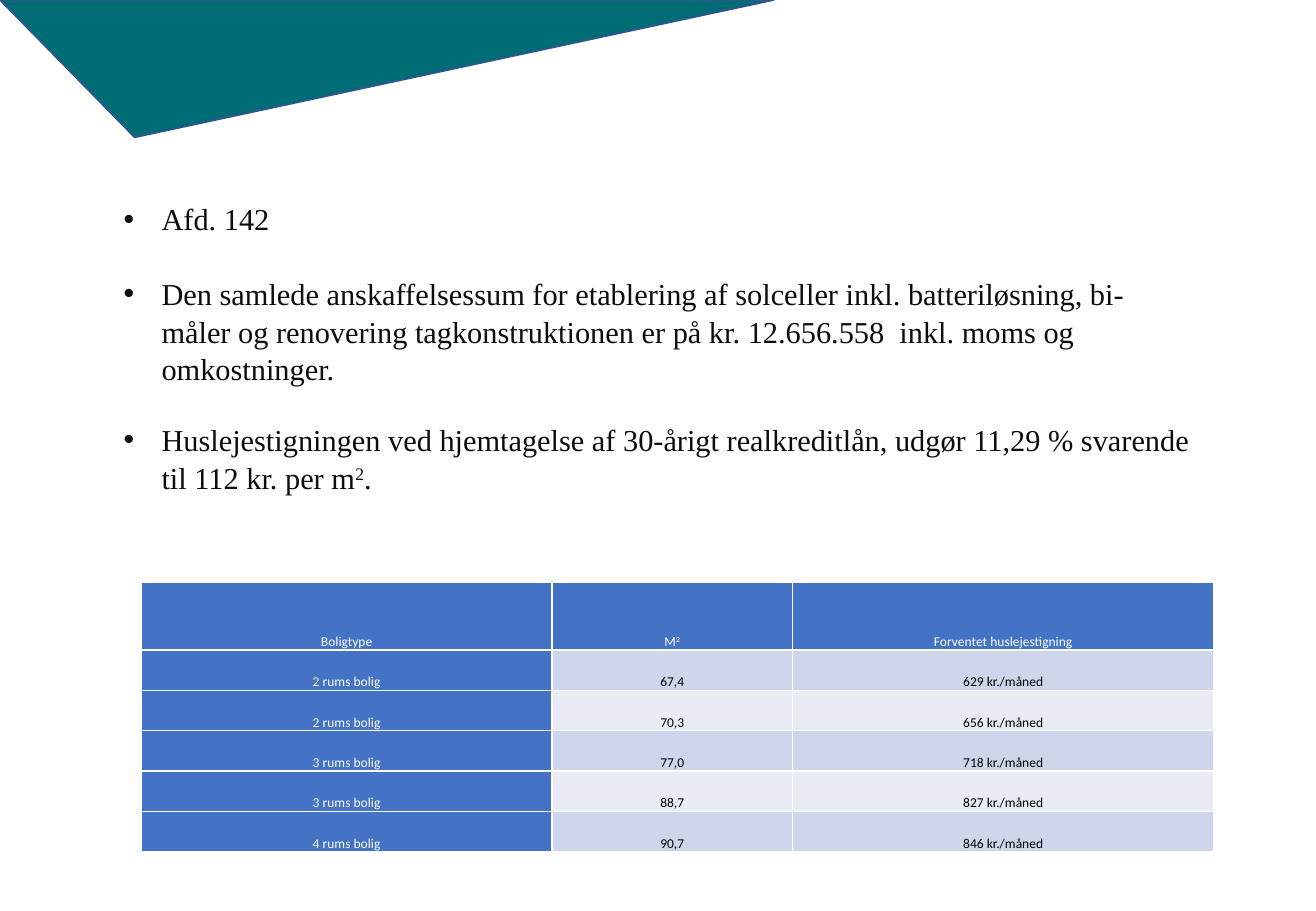
from lxml.etree import SubElement
from pptx import Presentation
from pptx.dml.color import RGBColor
from pptx.enum.shapes import MSO_SHAPE
from pptx.enum.text import MSO_ANCHOR, MSO_AUTO_SIZE, PP_ALIGN
from pptx.oxml.ns import qn
from pptx.util import Pt

COLORS = {
    "teal": "006D75",
    "outline": "325491",
    "ink": "0D0D0D",
    "black": "000000",
    "white": "FFFFFF",
    "header": "4472C4",
    "band_dark": "CFD5EA",
    "band_light": "E9EBF5",
}

POINTS = [
    (["Afd. 142"], 0),
    (["Den samlede anskaffelsessum for etablering af solceller inkl. batteriløsning, "
      "bi-måler og renovering tagkonstruktionen er på kr. 12.656.558  inkl. moms og "
      "omkostninger."], 21.6),
    (["Huslejestigningen ved hjemtagelse af 30-årigt realkreditlån, udgør 11,29 % "
      "svarende til 112 kr. per m", "2", "."], 19.4),
]

RENTS = [
    (["Boligtype"], ["M", "2"], ["Forventet huslejestigning"]),
    (["2 rums bolig"], ["67,4"], ["629 kr./måned"]),
    (["2 rums bolig"], ["70,3"], ["656 kr./måned"]),
    (["3 rums bolig"], ["77,0"], ["718 kr./måned"]),
    (["3 rums bolig"], ["88,7"], ["827 kr./måned"]),
    (["4 rums bolig"], ["90,7"], ["846 kr./måned"]),
]
COLUMN_WIDTHS = [243.4, 142.6, 249.8]
ROW_HEIGHTS = [40.3] + [23.9] * 5


def color(name):
    return RGBColor.from_string(COLORS[name])


def write(paragraph, parts, font_name, size, ink):
    for index, part in enumerate(parts):
        run = paragraph.add_run()
        run.text = part
        if index == 1:
            run._r.get_or_add_rPr().set("baseline", "30000")
    paragraph.font.name = font_name
    paragraph.font.size = Pt(size)
    paragraph.font.color.rgb = color(ink)


def add_banner(slide):
    banner = slide.shapes.add_shape(
        MSO_SHAPE.ISOSCELES_TRIANGLE, Pt(0), Pt(0), Pt(458.6), Pt(81.4))
    banner.adjustments[0] = 0.826
    banner.rotation = 180
    banner.shadow.inherit = False
    banner.fill.solid()
    banner.fill.fore_color.rgb = color("teal")
    banner.line.color.rgb = color("outline")
    banner.line.width = Pt(1)


def add_bullet(paragraph, indent):
    properties = paragraph._p.get_or_add_pPr()
    properties.set("marL", str(indent))
    properties.set("indent", str(-indent))
    SubElement(properties, qn("a:buFont")).set("typeface", "Arial")
    SubElement(properties, qn("a:buChar")).set("char", "•")


def add_points(slide):
    frame = slide.shapes.add_textbox(
        Pt(66.2), Pt(114.5), Pt(648), Pt(179.3)).text_frame
    frame.word_wrap = True
    frame.auto_size = MSO_AUTO_SIZE.SHAPE_TO_FIT_TEXT
    for index, (parts, gap) in enumerate(POINTS):
        paragraph = frame.add_paragraph() if index else frame.paragraphs[0]
        add_bullet(paragraph, Pt(22.5))
        paragraph.line_spacing = 1.04
        if gap:
            paragraph.space_before = Pt(gap)
        write(paragraph, parts, "Times New Roman", 18, "ink")


def add_borders(cell):
    properties = cell._tc.get_or_add_tcPr()
    for position, side in enumerate(("a:lnL", "a:lnR", "a:lnT", "a:lnB")):
        border = properties.makeelement(qn(side), {"w": str(Pt(1))})
        fill = SubElement(border, qn("a:solidFill"))
        SubElement(fill, qn("a:srgbClr")).set("val", COLORS["white"])
        properties.insert(position, border)


def fill_cell(cell, parts, background, ink):
    cell.fill.solid()
    cell.fill.fore_color.rgb = color(background)
    cell.vertical_anchor = MSO_ANCHOR.BOTTOM
    cell.margin_left = cell.margin_right = Pt(2.9)
    cell.margin_top = cell.margin_bottom = Pt(0)
    add_borders(cell)
    paragraph = cell.text_frame.paragraphs[0]
    paragraph.alignment = PP_ALIGN.CENTER
    write(paragraph, parts, "Calibri", 8, ink)


def add_rent_table(slide):
    table = slide.shapes.add_table(
        len(RENTS), len(COLUMN_WIDTHS), Pt(83.8), Pt(345.1),
        Pt(sum(COLUMN_WIDTHS)), Pt(sum(ROW_HEIGHTS))).table
    for column, width in zip(table.columns, COLUMN_WIDTHS):
        column.width = Pt(width)
    for row, height in zip(table.rows, ROW_HEIGHTS):
        row.height = Pt(height)
    for r, rent in enumerate(RENTS):
        band = "band_dark" if r % 2 else "band_light"
        for c, parts in enumerate(rent):
            heading = r == 0 or c == 0
            fill_cell(table.cell(r, c), parts,
                      "header" if heading else band,
                      "white" if heading else "black")
    table.first_row = table.horz_banding = False


def main():
    presentation = Presentation()
    presentation.slide_width = Pt(780)
    presentation.slide_height = Pt(540)
    slide = presentation.slides.add_slide(presentation.slide_layouts[6])
    add_banner(slide)
    add_points(slide)
    add_rent_table(slide)
    presentation.save("out.pptx")


if __name__ == "__main__":
    main()
